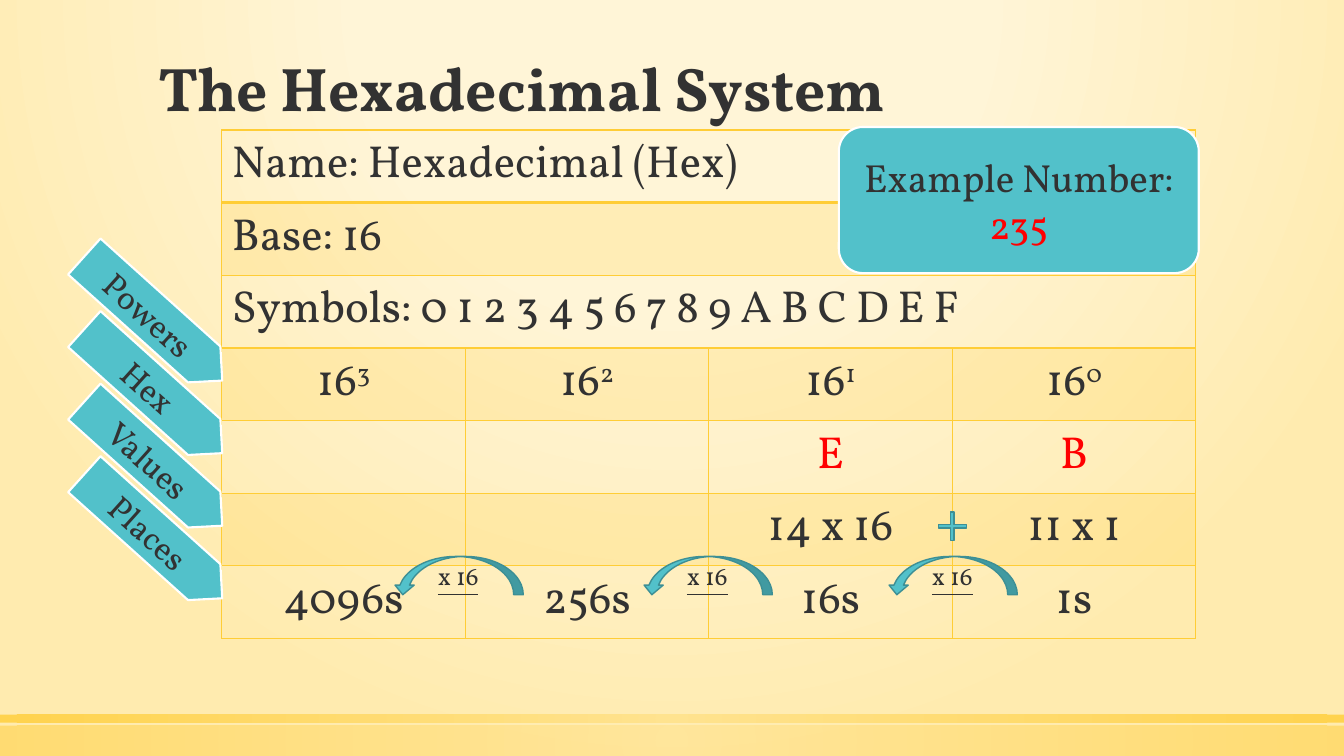
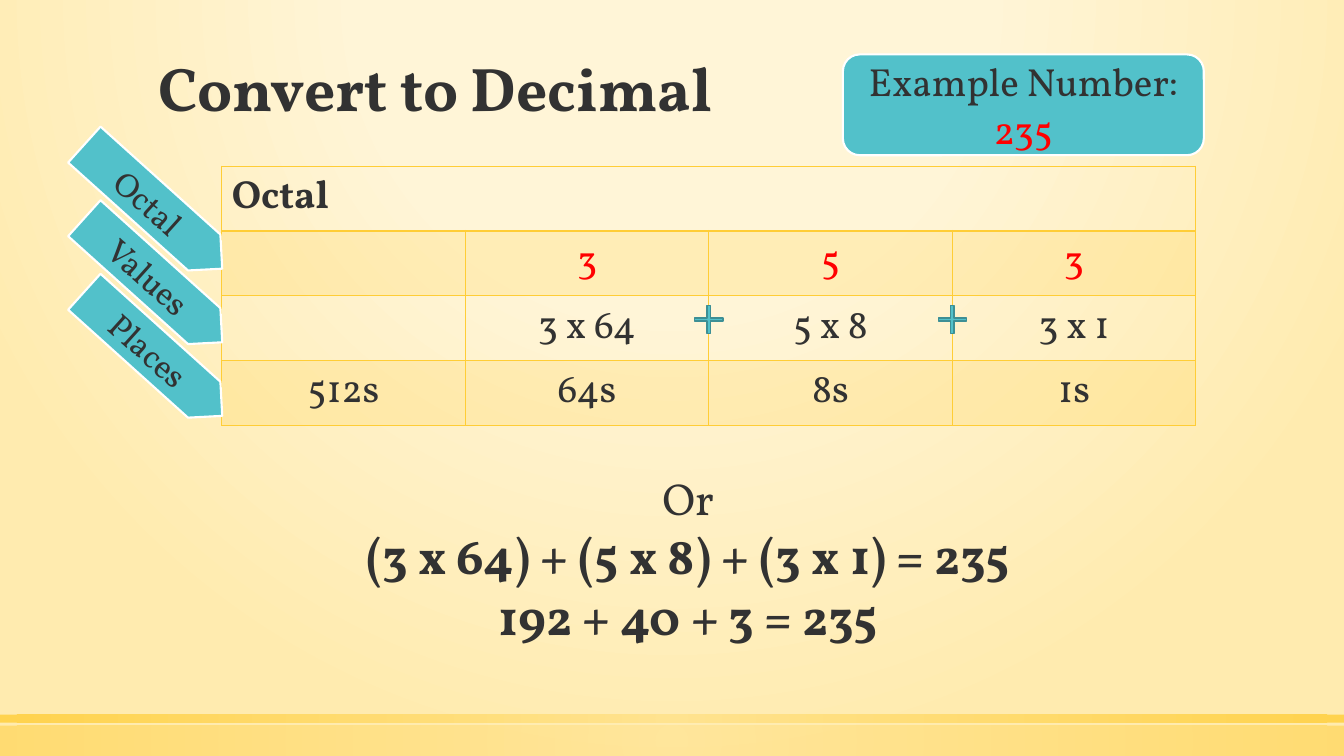
from dataclasses import dataclass

import lxml.etree
import pptx
import pptx.dml.color
import pptx.enum.shapes
import pptx.enum.text
import pptx.oxml.ns
import pptx.util

Inches = pptx.util.Inches
Pt = pptx.util.Pt
qn = pptx.oxml.ns.qn
Shape = pptx.enum.shapes.MSO_SHAPE
Align = pptx.enum.text.PP_ALIGN
Anchor = pptx.enum.text.MSO_ANCHOR


@dataclass(frozen=True)
class Theme:
    font: str = "Vollkorn"
    ink: str = "323232"
    red: str = "FF0000"
    teal: str = "52C1CA"
    dark_teal: str = "3D8F95"
    white: str = "FFFFFF"
    gold: str = "FFCD36"
    pale_gold: str = "FFE186"
    cream: str = "FFF5D7"
    sand: str = "FFEBAF"
    title_size: int = 44
    sum_size: int = 36
    large_size: int = 32
    medium_size: int = 28
    tag_size: int = 24
    arrow_size: int = 18


THEME = Theme()
SLIDE_WIDTH = 13.33
TABLE_LEFT = 2.2
COLUMN_WIDTH = 2.415
COLUMNS = 4


@dataclass(frozen=True)
class Row:
    """A table row; a plain string as cells spans all columns."""
    cells: object
    shaded: bool = False
    color: str = THEME.ink
    bold: bool = False


def rgb(color):
    return pptx.dml.color.RGBColor.from_string(color)


def write(paragraph, text, *, size, color=THEME.ink, bold=False,
          underline=False, raised=False, align=Align.CENTER):
    """Append one formatted run to the paragraph."""
    paragraph.alignment = align
    run = paragraph.add_run()
    run.text = text
    font = run.font
    font.name = THEME.font
    font.size = Pt(size)
    font.bold = bold
    font.underline = underline
    font.color.rgb = rgb(color)
    if raised:
        run.font._element.set("baseline", "30000")


def write_lines(frame, lines):
    """Write (text, format) pairs, one paragraph each."""
    frame.word_wrap = True
    for index, (text, style) in enumerate(lines):
        paragraph = frame.add_paragraph() if index else frame.paragraphs[0]
        write(paragraph, text, **style)


def add_color(parent, color, opacity):
    node = lxml.etree.SubElement(parent, qn("a:srgbClr"), val=color)
    if opacity < 100:
        lxml.etree.SubElement(node, qn("a:alpha"), val=str(opacity * 1000))


def set_radial_gradient(properties, stops, focus):
    """Swap the solid fill for (position, color, opacity) stops around focus."""
    solid = properties.find(qn("a:solidFill"))
    gradient = lxml.etree.Element(qn("a:gradFill"), rotWithShape="1")
    stop_list = lxml.etree.SubElement(gradient, qn("a:gsLst"))
    for position, color, opacity in stops:
        stop = lxml.etree.SubElement(stop_list, qn("a:gs"), pos=str(position * 1000))
        add_color(stop, color, opacity)
    circle = lxml.etree.SubElement(gradient, qn("a:path"), path="circle")
    edges = {side: str(value * 1000) for side, value in zip("ltrb", focus)}
    lxml.etree.SubElement(circle, qn("a:fillToRect"), **edges)
    properties.replace(solid, gradient)


def set_background(master):
    master.background.fill.solid()
    set_radial_gradient(
        master.element.find(".//" + qn("p:bgPr")),
        [(0, THEME.cream, 59), (40, THEME.cream, 66), (100, THEME.sand, 100)],
        (50, -80, 50, 180))


def add_figure(slide, preset, left, top, width, height, line=None, line_width=1.0):
    figure = slide.shapes.add_shape(
        preset, Inches(left), Inches(top), Inches(width), Inches(height))
    figure.shadow.inherit = False
    figure.fill.solid()
    figure.fill.fore_color.rgb = rgb(THEME.teal)
    if line:
        figure.line.color.rgb = rgb(line)
        figure.line.width = Pt(line_width)
    else:
        figure.line.fill.background()
    figure.text_frame.vertical_anchor = Anchor.MIDDLE
    return figure


def add_bands(slide):
    for top, height, opacity in ((7.2, 0.3, 50), (7.09, 0.08, 80)):
        band = add_figure(slide, Shape.RECTANGLE, 0, top, SLIDE_WIDTH, height)
        set_radial_gradient(
            band.element.spPr,
            [(0, THEME.pale_gold, opacity), (100, THEME.gold, opacity)],
            (50, 50, 50, 50))


def start_slide(deck, heading):
    slide = deck.slides.add_slide(deck.slide_layouts[5])
    add_bands(slide)
    title = slide.shapes.title
    title.left, title.top = Inches(1.47), Inches(0.51)
    title.width, title.height = Inches(10.4), Inches(0.78)
    title.text_frame.vertical_anchor = Anchor.BOTTOM
    paragraph = title.text_frame.paragraphs[0]
    paragraph.line_spacing = 0.9
    write(paragraph, heading, size=THEME.title_size, bold=True, align=Align.LEFT)
    return slide


def set_borders(cell, widths):
    """Draw gold borders; widths maps the sides L, R, T, B to points."""
    properties = cell._tc.get_or_add_tcPr()
    for index, side in enumerate("LRTB"):
        border = lxml.etree.Element(qn("a:ln" + side), w=str(Pt(widths[side])))
        fill = lxml.etree.SubElement(border, qn("a:solidFill"))
        add_color(fill, THEME.gold, 100)
        properties.insert(index, border)


def shade(cell, shaded):
    if not shaded:
        cell.fill.background()
        return
    cell.fill.solid()
    cell.fill.fore_color.rgb = rgb(THEME.gold)
    color = cell._tc.tcPr.find(qn("a:solidFill")).find(qn("a:srgbClr"))
    lxml.etree.SubElement(color, qn("a:alpha"), val="20000")


def write_cell(cell, text, row, size, align):
    """Write the cell text; what follows ^ is raised."""
    base, _, power = text.partition("^")
    style = dict(size=size, color=row.color, bold=row.bold, align=align)
    paragraph = cell.text_frame.paragraphs[0]
    if base:
        write(paragraph, base, **style)
    if power:
        write(paragraph, power, raised=True, **style)


def add_place_table(slide, rows, top, row_height, size):
    table = slide.shapes.add_table(
        len(rows), COLUMNS, Inches(TABLE_LEFT), Inches(top),
        Inches(COLUMN_WIDTH * COLUMNS), Inches(row_height * len(rows))).table
    table.first_row = table.horz_banding = False
    for column in table.columns:
        column.width = Inches(COLUMN_WIDTH)
    for index, row in enumerate(rows):
        table.rows[index].height = Inches(row_height)
        cells = [table.cell(index, column) for column in range(COLUMNS)]
        for cell in cells:
            shade(cell, row.shaded)
            set_borders(cell, {"L": 1, "R": 1, "T": 2 if index == 1 else 1,
                               "B": 2 if index == 0 else 1})
        if isinstance(row.cells, str):
            cells[0].merge(cells[-1])
            write_cell(cells[0], row.cells, row, size, Align.LEFT)
        else:
            for cell, text in zip(cells, row.cells):
                cell.vertical_anchor = Anchor.MIDDLE
                write_cell(cell, text, row, size, Align.CENTER)


def add_example_box(slide, left, top, width, height):
    box = add_figure(slide, Shape.ROUNDED_RECTANGLE, left, top, width, height,
                     THEME.white, 1.5)
    write_lines(box.text_frame, [
        ("Example Number:", dict(size=THEME.medium_size)),
        ("235", dict(size=THEME.medium_size, color=THEME.red))])


def add_row_tags(slide, labels, top, step):
    for index, label in enumerate(labels):
        tag = add_figure(slide, Shape.PENTAGON, 0.6, top + index * step, 1.84, 0.48,
                         THEME.white, 1.5)
        tag.rotation = 42
        write_lines(tag.text_frame, [(label, dict(size=THEME.tag_size))])


def add_plus(slide, column, top):
    """Put a plus sign on the left edge of the given column."""
    side = 0.38
    left = TABLE_LEFT + column * COLUMN_WIDTH - side / 2
    plus = add_figure(slide, Shape.MATH_PLUS, left, top, side, side, THEME.dark_teal)
    plus.adjustments[0] = 0.087


def add_times_arrow(slide, left):
    arrow = add_figure(slide, Shape.CURVED_DOWN_ARROW, left, 5.52, 1.29, 0.38,
                       THEME.dark_teal)
    arrow.element.spPr.find(qn("a:xfrm")).set("flipH", "1")
    write_lines(arrow.text_frame,
                [("x 16", dict(size=THEME.arrow_size, underline=True))])


def add_sum(slide):
    box = slide.shapes.add_textbox(Inches(2.22), Inches(4.62), Inches(9.21), Inches(1.85))
    bold_sum = dict(size=THEME.sum_size, bold=True)
    write_lines(box.text_frame, [
        ("Or", dict(size=THEME.large_size)),
        ("(3 x 64) + (5 x 8) + (3 x 1) = 235", bold_sum),
        ("192 + 40 + 3 = 235", bold_sum)])


def build_hexadecimal(deck):
    slide = start_slide(deck, "The Hexadecimal System")
    rows = [
        Row("Name: Hexadecimal (Hex)"),
        Row("Base: 16", shaded=True),
        Row("Symbols: 0 1 2 3 4 5 6 7 8 9 A B C D E F"),
        Row([f"16^{power}" for power in (3, 2, 1, 0)], shaded=True),
        Row(["", "", "E", "B"], color=THEME.red),
        Row(["", "", "14 x 16", "11 x 1"], shaded=True),
        Row(["4096s", "256s", "16s", "1s"]),
    ]
    add_place_table(slide, rows, 1.29, 0.72, THEME.large_size)
    add_example_box(slide, 8.32, 1.26, 3.57, 1.45)
    add_row_tags(slide, ["Powers", "Hex", "Values", "Places"], 2.92, 0.72)
    add_plus(slide, 3, 5.03)
    for left in (3.9, 6.37, 8.8):
        add_times_arrow(slide, left)


def build_conversion(deck):
    slide = start_slide(deck, "Convert to Decimal")
    add_example_box(slide, 8.36, 0.54, 3.58, 1)
    rows = [
        Row("Octal", bold=True),
        Row(["", "3", "5", "3"], shaded=True, color=THEME.red),
        Row(["", "3 x 64", "5 x 8", "3 x 1"]),
        Row(["512s", "64s", "8s", "1s"], shaded=True),
    ]
    add_place_table(slide, rows, 1.65, 0.64, THEME.medium_size)
    add_row_tags(slide, ["Octal", "Values", "Places"], 1.81, 0.73)
    for column in (2, 3):
        add_plus(slide, column, 2.98)
    add_sum(slide)


def main():
    deck = pptx.Presentation()
    deck.slide_width, deck.slide_height = Inches(SLIDE_WIDTH), Inches(7.5)
    set_background(deck.slide_master)
    build_hexadecimal(deck)
    build_conversion(deck)
    deck.save("out.pptx")


if __name__ == "__main__":
    main()
